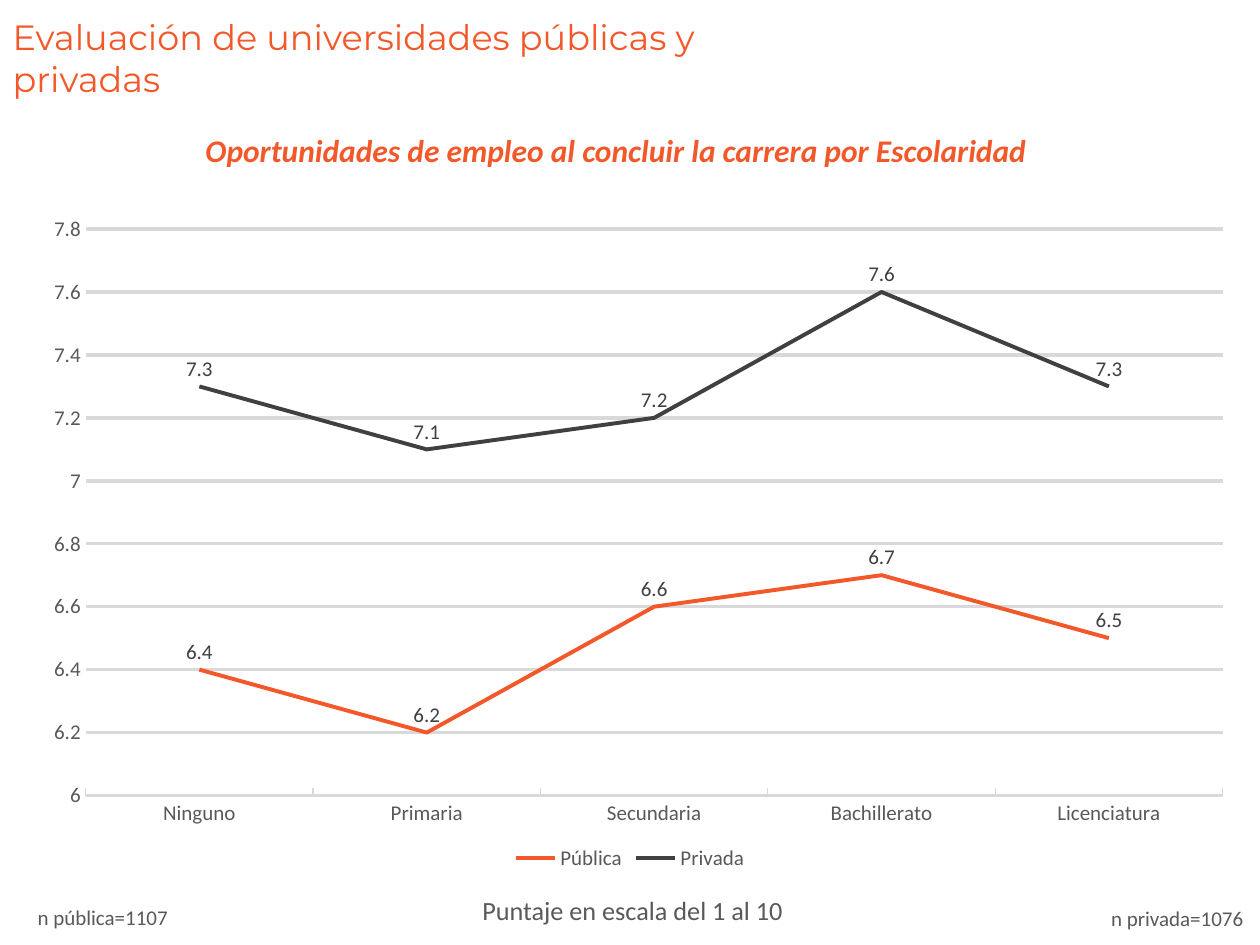
from lxml import etree
from pptx import Presentation
from pptx import util as u
from pptx.chart.data import CategoryChartData
from pptx.dml.color import RGBColor
from pptx.enum import chart as charts, text
from pptx.oxml.ns import qn

ORANGE = RGBColor(0xF2, 0x58, 0x29)
DARK = RGBColor(0x40, 0x40, 0x40)
GRAY = RGBColor(0x59, 0x59, 0x59)
LIGHT = RGBColor(0xD9, 0xD9, 0xD9)

WIDTH, HEIGHT = u.Inches(10), u.Inches(7.5)
TITLE_ONLY = 5


class Page:
    """Style and current slide; places are given in hundredths of its size."""

    body_font = "Calibri"
    title_font = "Montserrat"

    def __init__(self, deck):
        self.slide = deck.slides.add_slide(deck.slide_layouts[TITLE_ONLY])

    def area(self, left, top, width, height):
        return (int(WIDTH * left / 100), int(HEIGHT * top / 100),
                int(WIDTH * width / 100), int(HEIGHT * height / 100))

    def style(self, font, size, color, name=None):
        font.name = name or self.body_font
        font.size = u.Pt(size)
        font.color.rgb = color

    def title(self, words, place, size):
        box = self.slide.shapes.title
        box.left, box.top, box.width, box.height = self.area(*place)
        frame = box.text_frame
        frame.text = words
        frame.word_wrap = True
        frame.auto_size = text.MSO_AUTO_SIZE.NONE
        frame.vertical_anchor = text.MSO_ANCHOR.TOP
        para = frame.paragraphs[0]
        para.alignment = text.PP_ALIGN.LEFT
        self.style(para.font, size, ORANGE, self.title_font)

    def label(self, words, place, size, color=GRAY, align=text.PP_ALIGN.LEFT, strong=False):
        frame = self.slide.shapes.add_textbox(*self.area(*place)).text_frame
        frame.text = words
        frame.word_wrap = strong
        para = frame.paragraphs[0]
        para.alignment = align
        self.style(para.font, size, color)
        if strong:
            para.font.bold = para.font.italic = True

    def line_chart(self, categories, series, place, plot_share):
        data = CategoryChartData()
        data.categories = categories
        for name, values, _ in series:
            data.add_series(name, values)
        chart = self.slide.shapes.add_chart(
            charts.XL_CHART_TYPE.LINE, *self.area(*place), data).chart
        self.style(chart.font, 12, GRAY)
        chart.has_title = False
        chart.has_legend = True
        chart.legend.position = charts.XL_LEGEND_POSITION.BOTTOM
        chart.legend.include_in_layout = False
        self.style(chart.legend.font, 12, GRAY)
        self.axes(chart)
        for line, (_, _, color) in zip(chart.plots[0].series, series):
            self.series_line(line, color)
        self.plot_layout(chart, plot_share)

    def axes(self, chart):
        category, value = chart.category_axis, chart.value_axis
        for axis in (category, value):
            self.style(axis.tick_labels.font, 12, GRAY)
            axis.minor_tick_mark = charts.XL_TICK_MARK.NONE
        category.major_tick_mark = charts.XL_TICK_MARK.INSIDE
        category.format.line.color.rgb = LIGHT
        category.format.line.width = u.Pt(0.75)
        value.major_tick_mark = charts.XL_TICK_MARK.NONE
        value.format.line.fill.background()
        value.minimum_scale, value.maximum_scale, value.major_unit = 6, 7.8, 0.2
        value.has_major_gridlines = True
        grid = value.major_gridlines.format.line
        grid.color.rgb = LIGHT
        grid.width = u.Pt(2)

    def series_line(self, line, color):
        line.smooth = False
        line.marker.style = charts.XL_MARKER_STYLE.NONE
        line.format.line.color.rgb = color
        line.format.line.width = u.Pt(2.25)
        labels = line.data_labels
        labels.show_value = True
        labels.position = charts.XL_LABEL_POSITION.ABOVE
        self.style(labels.font, 12, DARK)

    def plot_layout(self, chart, plot_share):
        # The inner plot area is fixed by hand, which needs XML
        plot_area = chart.plots[0]._element.getparent()
        for old in plot_area.findall(qn("c:layout")):
            plot_area.remove(old)
        layout = etree.Element(qn("c:layout"))
        manual = etree.SubElement(layout, qn("c:manualLayout"))
        settings = [("layoutTarget", "inner"), ("xMode", "edge"), ("yMode", "edge")]
        settings += zip("xywh", plot_share)
        for tag, setting in settings:
            etree.SubElement(manual, qn(f"c:{tag}")).set("val", str(setting))
        plot_area.insert(0, layout)


def main():
    deck = Presentation()
    deck.slide_width, deck.slide_height = WIDTH, HEIGHT
    page = Page(deck)

    # Headings
    page.title("Evaluación de universidades públicas y privadas", (0, 0.93, 57.8, 10.3), 20)
    page.label("Oportunidades de empleo al concluir la carrera por Escolaridad",
               (14.7, 13.2, 68.4, 5.3), 18, ORANGE, text.PP_ALIGN.CENTER, strong=True)

    # Scores by schooling
    page.line_chart(
        ["Ninguno", "Primaria", "Secundaria", "Bachillerato", "Licenciatura"],
        [("Pública", (6.4, 6.2, 6.6, 6.7, 6.5), ORANGE),
         ("Privada", (7.3, 7.1, 7.2, 7.6, 7.3), DARK)],
        (2, 22.13, 96, 70.53), (0.05, 0.03, 0.94, 0.85))

    # Scale and sample sizes
    page.label("Puntaje en escala del 1 al 10", (37.3, 94, 26.6, 4.67), 15)
    page.label("n pública=1107", (2, 95.07, 12.7, 4), 12)
    page.label("n privada=1076", (87.2, 95.2, 12.7, 4), 12)

    deck.save("out.pptx")


if __name__ == "__main__":
    main()
